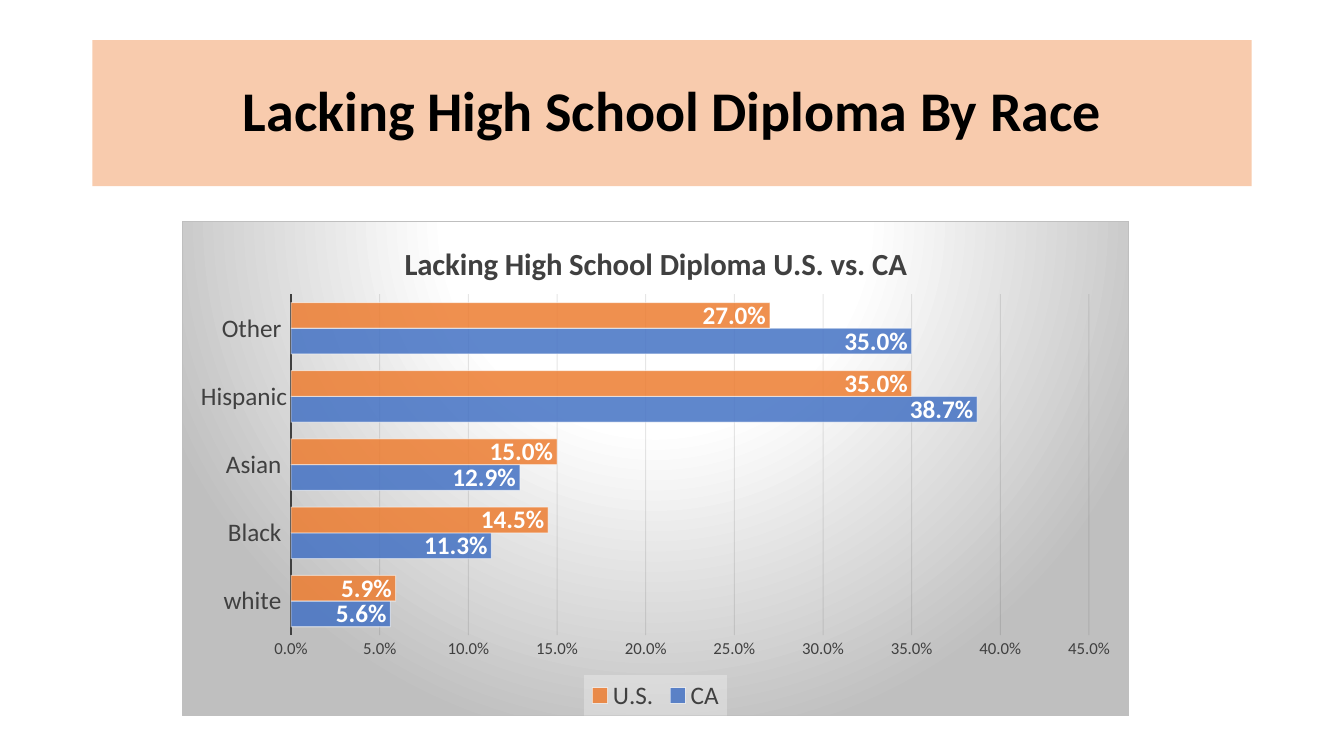
from dataclasses import dataclass

from lxml import etree
from pptx import Presentation
from pptx.chart.data import CategoryChartData
from pptx.dml.color import RGBColor
from pptx.enum.chart import XL_CHART_TYPE, XL_LABEL_POSITION, XL_LEGEND_POSITION, XL_TICK_MARK
from pptx.enum.text import MSO_ANCHOR, PP_ALIGN
from pptx.oxml import parse_xml
from pptx.oxml.ns import nsdecls, qn
from pptx.util import Cm, Pt

BAR = XL_CHART_TYPE.BAR_CLUSTERED
INSIDE_END = XL_LABEL_POSITION.INSIDE_END
BOTTOM = XL_LEGEND_POSITION.BOTTOM
NO_TICK = XL_TICK_MARK.NONE
MIDDLE = MSO_ANCHOR.MIDDLE
CENTER = PP_ALIGN.CENTER
PERCENT = "0.0%"

CATEGORIES = ["white ", "Black ", "Asian ", "Hispanic", "Other "]
RATES = {
    "CA": [0.056, 0.113, 0.129, 0.387, 0.35],
    "U.S.": [0.059, 0.145, 0.15, 0.35, 0.27],
}


@dataclass(frozen=True)
class Theme:
    font: str = "Calibri"
    black: str = "000000"
    white: str = "FFFFFF"
    grey: str = "404040"
    grid: str = "0D0D0D"
    edge: str = "BFBFBF"
    legend: str = "F2F2F2"
    banner: str = "F8CBAD"
    bars: tuple = ("4472C4", "ED7D31")
    title_size: int = 40
    chart_title_size: int = 22
    label_size: int = 18
    axis_size: int = 12
    base_size: int = 10


def rgb(color):
    return RGBColor.from_string(color)


def style_font(font, name, size, color, bold=False):
    font.name, font.size, font.bold = name, Pt(size), bold
    font.color.rgb = rgb(color)


def write(tf, text, align=CENTER, spacing=None, **style):
    """Put one formatted paragraph in a text frame."""
    p = tf.paragraphs[0]
    p.alignment = align
    p.line_spacing = spacing
    r = p.add_run()
    r.text = text
    style_font(r.font, **style)


def set_line(line, color, width=0.75):
    line.color.rgb = rgb(color)
    line.width = Pt(width)


def set_alpha(element, *percents):
    """Give the colours inside an element their opacities, in order."""
    for color, percent in zip(element.iter(qn("a:srgbClr")), percents):
        etree.SubElement(color, qn("a:alpha"), val=str(percent * 1000))


class SlideBuilder:
    def __init__(self, prs, theme):
        self.theme = theme
        self.slide = prs.slides.add_slide(prs.slide_layouts[5])

    def text_style(self, size, color, bold=False):
        return dict(name=self.theme.font, size=size, color=color, bold=bold)

    def title(self, text, left, top, width, height):
        t = self.theme
        sp = self.slide.shapes.title
        sp.left, sp.top, sp.width, sp.height = left, top, width, height
        sp.fill.solid()
        sp.fill.fore_color.rgb = rgb(t.banner)
        tf = sp.text_frame
        tf.word_wrap = True
        tf.vertical_anchor = MIDDLE
        write(tf, text, spacing=0.9, **self.text_style(t.title_size, t.black, True))

    def bar_chart(self, title, categories, rates, left, top, width, height):
        t = self.theme
        data = CategoryChartData(number_format=PERCENT)
        data.categories = categories
        for name, values in rates.items():
            data.add_series(name, values)
        chart = self.slide.shapes.add_chart(BAR, left, top, width, height, data).chart
        style_font(chart.font, **self.text_style(t.base_size, t.black))
        chart.has_title = True
        write(chart.chart_title.text_frame, title,
              **self.text_style(t.chart_title_size, t.grey, True))
        chart.chart_title.include_in_layout = False
        self.bars(chart.plots[0])
        self.axes(chart)
        self.legend(chart)
        self.chart_area(chart)

    def bars(self, plot):
        t = self.theme
        plot.gap_width, plot.overlap = 65, 0
        plot.vary_by_categories = False
        for series, color in zip(plot.series, t.bars):
            series.invert_if_negative = False
            series.format.fill.solid()
            series.format.fill.fore_color.rgb = rgb(color)
            set_line(series.format.line, t.white)
            set_alpha(series._element.find(qn("c:spPr")), 85, 50)
            labels = series.data_labels
            labels.show_value = True
            labels.position = INSIDE_END
            labels.number_format, labels.number_format_is_linked = PERCENT, False
            style_font(labels.font, **self.text_style(t.label_size, t.white, True))

    def axes(self, chart):
        t = self.theme
        cat, val = chart.category_axis, chart.value_axis
        for axis, size in ((cat, t.label_size), (val, t.axis_size)):
            axis.major_tick_mark = axis.minor_tick_mark = NO_TICK
            style_font(axis.tick_labels.font, **self.text_style(size, t.grey))
        set_line(cat.format.line, t.grey, 1.5)
        val.format.line.fill.background()
        val.minimum_scale, val.maximum_scale, val.major_unit = 0, 0.45, 0.05
        val.tick_labels.number_format = PERCENT
        val.tick_labels.number_format_is_linked = False
        val.has_major_gridlines = True
        set_line(val.major_gridlines.format.line, t.grid)
        set_alpha(val._element.find(qn("c:majorGridlines")), 10)

    def legend(self, chart):
        t = self.theme
        chart.has_legend = True
        legend = chart.legend
        legend.position = BOTTOM
        legend.include_in_layout = False
        style_font(legend.font, **self.text_style(t.label_size, t.grey))
        fill = parse_xml(
            f'<c:spPr {nsdecls("c", "a")}><a:solidFill><a:srgbClr val="{t.legend}"/>'
            '</a:solidFill></c:spPr>')
        set_alpha(fill, 39)
        legend._element.find(qn("c:overlay")).addnext(fill)

    def chart_area(self, chart):
        t = self.theme
        # Radial background and thin border
        stops = "".join(
            f'<a:gs pos="{pos * 1000}"><a:srgbClr val="{color}"/></a:gs>'
            for pos, color in ((0, t.white), (39, t.white), (100, t.edge)))
        area = parse_xml(
            f'<c:spPr {nsdecls("c", "a")}><a:gradFill><a:gsLst>{stops}</a:gsLst>'
            '<a:path path="circle"><a:fillToRect l="50000" t="-80000" r="50000" b="180000"/>'
            f'</a:path></a:gradFill><a:ln w="{Pt(0.75)}"><a:solidFill>'
            f'<a:srgbClr val="{t.edge}"/></a:solidFill></a:ln></c:spPr>')
        chart_xml = chart._chartSpace.find(qn("c:chart"))
        chart_xml.addnext(area)
        # Plot area as fractions of the chart
        plot_xml = chart_xml.find(qn("c:plotArea"))
        for old in plot_xml.findall(qn("c:layout")):
            plot_xml.remove(old)
        spots = "".join(f'<c:{key} val="{value}"/>' for key, value in (
            ("layoutTarget", "inner"), ("xMode", "edge"), ("yMode", "edge"),
            ("x", 0.115), ("y", 0.147), ("w", 0.843), ("h", 0.69)))
        plot_xml.insert(0, parse_xml(
            f'<c:layout {nsdecls("c")}><c:manualLayout>{spots}</c:manualLayout></c:layout>'))


def main():
    prs = Presentation()
    prs.slide_width, prs.slide_height = Cm(33.87), Cm(19.05)
    s = SlideBuilder(prs, Theme())
    # Banner
    s.title("Lacking High School Diploma By Race",
            Cm(2.33), Cm(1.01), Cm(29.21), Cm(3.68))
    # Comparison of the two regions
    s.bar_chart("Lacking High School Diploma U.S. vs. CA", CATEGORIES, RATES,
                Cm(4.58), Cm(5.57), Cm(23.88), Cm(12.48))
    prs.save("out.pptx")


if __name__ == "__main__":
    main()
